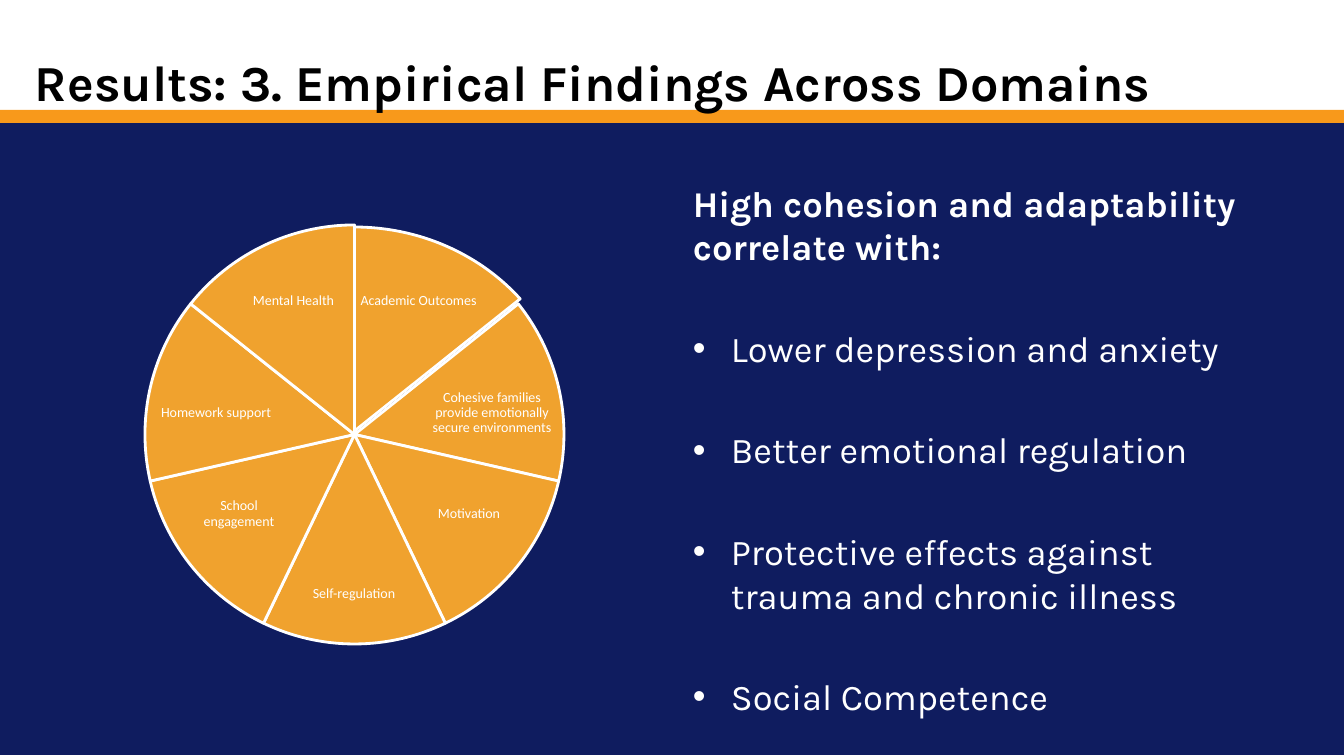
import dataclasses

import lxml.etree
import pptx
import pptx.dml.color
import pptx.enum.shapes
import pptx.enum.text
import pptx.oxml.ns
import pptx.util

EMU_PER_PX = 914400 / 100.8
SLIDE_SIZE = (1344, 756)
SHAPES = pptx.enum.shapes.MSO_SHAPE
ALIGN = pptx.enum.text.PP_ALIGN
ANCHOR = pptx.enum.text.MSO_ANCHOR

WHEEL_BOX = (145, 225, 419, 419)
FIRST_SLICE_BOX = (137, 227, 435, 408)
SLICES = [
    ("Academic Outcomes", (359, 265, 119, 71)),
    ("Cohesive families provide emotionally secure environments", (431, 374, 122, 78)),
    ("Motivation", (414, 474, 110, 80)),
    ("Self-regulation", (298, 554, 112, 80)),
    ("School engagement", (184, 474, 110, 80)),
    ("Homework support", (155, 374, 122, 78)),
    ("Mental Health", (236, 265, 115, 72)),
]
FINDINGS = [
    "Lower depression and anxiety",
    "Better emotional regulation",
    "Protective effects against trauma and chronic illness",
    "Social Competence",
]


@dataclasses.dataclass(frozen=True)
class Theme:
    navy: str = "0F1C5F"
    orange: str = "F8991B"
    amber: str = "F0A22E"
    white: str = "FFFFFF"
    black: str = "000000"
    text_font: str = "Karla"
    label_font: str = "Calibri"
    title_size: float = 36
    body_size: float = 25.9
    label_size: float = 10
    slice_line: float = 2
    finding_gap: float = 41.5


THEME = Theme()


def px(length):
    return pptx.util.Emu(round(length * EMU_PER_PX))


def rgb(value):
    return pptx.dml.color.RGBColor.from_string(value)


def add_filled_shape(slide, kind, box, color):
    shape = slide.shapes.add_shape(kind, *map(px, box))
    shape.shadow.inherit = False
    shape.fill.solid()
    shape.fill.fore_color.rgb = rgb(color)
    shape.line.fill.background()
    return shape


def add_text_frame(slide, box, anchor, inset=None):
    """Add a wrapping text box; inset in px replaces the default margins."""
    text_frame = slide.shapes.add_textbox(*map(px, box)).text_frame
    text_frame.word_wrap = True
    text_frame.vertical_anchor = anchor
    if inset is not None:
        text_frame.margin_left = text_frame.margin_right = px(inset)
        text_frame.margin_top = text_frame.margin_bottom = px(inset)
    return text_frame


def write(paragraph, text, font_name, size, color, bold=False):
    paragraph.text = text
    for run in paragraph.runs:
        run.font.name = font_name
        run.font.size = pptx.util.Pt(size)
        run.font.color.rgb = rgb(color)
        run.font.bold = bold


def add_bullet(paragraph, indent):
    properties = paragraph._p.get_or_add_pPr()
    properties.set("marL", str(px(indent)))
    properties.set("indent", str(-px(indent)))
    for tag, name, value in (("a:buFont", "typeface", "Arial"), ("a:buChar", "char", "•")):
        element = lxml.etree.SubElement(properties, pptx.oxml.ns.qn(tag))
        element.set(name, value)


def add_title(slide, text):
    text_frame = add_text_frame(slide, (25, 18, 1252, 126), ANCHOR.MIDDLE)
    write(text_frame.paragraphs[0], text, THEME.text_font, THEME.title_size, THEME.black, True)


def add_slice(slide, box, start, end):
    """Add a pie sector between two angles in degrees, clockwise from the right."""
    sector = add_filled_shape(slide, SHAPES.PIE, box, THEME.amber)
    # Angles are stored in 60000ths of a degree, adjustments in 100000ths.
    for index, angle in enumerate((start, end)):
        sector.adjustments[index] = angle % 360 * 0.6
    sector.line.color.rgb = rgb(THEME.white)
    sector.line.width = pptx.util.Pt(THEME.slice_line)


def add_slice_label(slide, text, box):
    text_frame = add_text_frame(slide, box, ANCHOR.MIDDLE, inset=1)
    paragraph = text_frame.paragraphs[0]
    write(paragraph, text, THEME.label_font, THEME.label_size, THEME.white)
    paragraph.alignment = ALIGN.CENTER
    paragraph.line_spacing = 0.9


def add_wheel(slide):
    sweep = 360 / len(SLICES)
    for index, (text, label_box) in enumerate(SLICES):
        start = 270 + index * sweep
        box = WHEEL_BOX if index else FIRST_SLICE_BOX
        add_slice(slide, box, start, start + sweep)
        add_slice_label(slide, text, label_box)


def add_findings(slide, heading, findings):
    text_frame = add_text_frame(slide, (683, 176, 594, 499), ANCHOR.TOP)
    write(text_frame.paragraphs[0], heading, THEME.text_font, THEME.body_size, THEME.white, True)
    for finding in findings:
        paragraph = text_frame.add_paragraph()
        write(paragraph, finding, THEME.text_font, THEME.body_size, THEME.white)
        paragraph.space_before = pptx.util.Pt(THEME.finding_gap)
        add_bullet(paragraph, indent=38)


def main():
    presentation = pptx.Presentation()
    presentation.slide_width, presentation.slide_height = map(px, SLIDE_SIZE)
    slide = presentation.slides.add_slide(presentation.slide_layouts[6])
    add_filled_shape(slide, SHAPES.RECTANGLE, (0, 112, 1344, 643), THEME.navy)
    add_filled_shape(slide, SHAPES.RECTANGLE, (0, 110, 1344, 13), THEME.orange)
    add_title(slide, "Results: 3. Empirical Findings Across Domains")
    add_wheel(slide)
    add_findings(slide, "High cohesion and adaptability correlate with:", FINDINGS)
    presentation.save("out.pptx")


if __name__ == "__main__":
    main()
